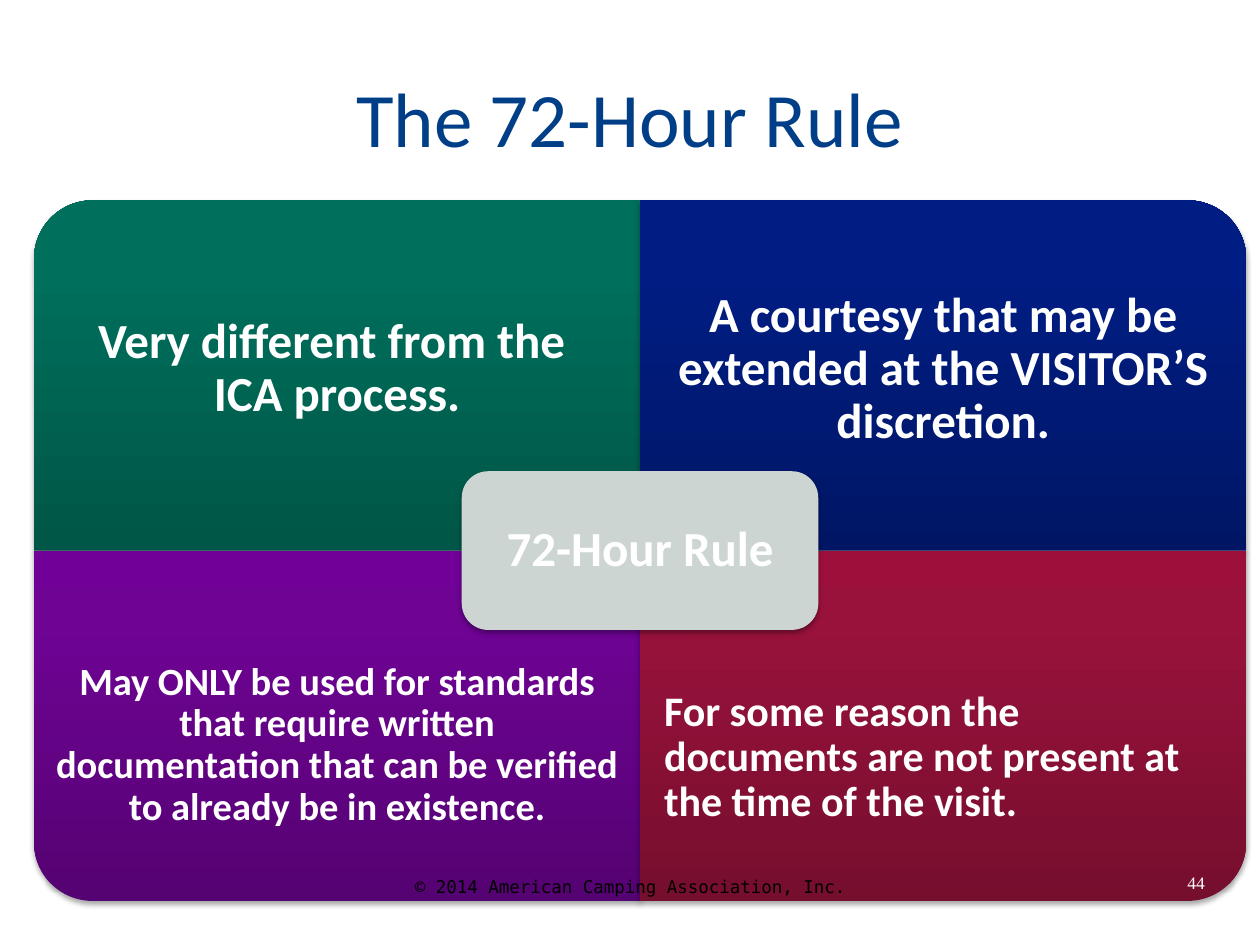
from dataclasses import dataclass

from lxml.etree import SubElement
from pptx import Presentation
from pptx.dml.color import RGBColor
from pptx.enum.shapes import MSO_SHAPE
from pptx.enum.text import MSO_ANCHOR, PP_ALIGN
from pptx.oxml import parse_xml
from pptx.oxml.ns import nsdecls, qn
from pptx.util import Inches, Pt

COLS, ROWS = 100, 75
CELL = Inches(0.1)


@dataclass(frozen=True)
class Theme:
    font: str = "Calibri"
    mono: str = "DejaVu Sans Mono"
    serif: str = "Times New Roman"
    title: str = "003F87"
    light: str = "FFFFFF"
    dark: str = "000000"
    hub: str = "CCD5D2"
    green: tuple = ("005647", "006F5C", "00705C")
    blue: tuple = ("001665", "001D83", "001D84")
    purple: tuple = ("550272", "6E0394", "700098")
    red: tuple = ("760E2E", "99123C", "9C103B")
    title_size: int = 44
    large: int = 28
    medium: int = 24
    small: int = 22
    note: int = 10


T = Theme()


def place(box):
    return [round(v * CELL) for v in box]


def add_text(s, box, text, *, size, color=T.light, font=T.font, bold=False,
             align=PP_ALIGN.CENTER, anchor=MSO_ANCHOR.MIDDLE, inset=1, spacing=None):
    tf = s.shapes.add_textbox(*place(box)).text_frame
    tf.word_wrap = True
    tf.vertical_anchor = anchor
    tf.margin_left = tf.margin_right = tf.margin_top = tf.margin_bottom = round(inset * CELL)
    p = tf.paragraphs[0]
    p.text = text
    p.alignment = align
    p.line_spacing = spacing
    for r in p.runs:
        r.font.name = font
        r.font.size = Pt(size)
        r.font.bold = bold
        r.font.color.rgb = RGBColor.from_string(color)


def add_shadow(sp):
    effects = SubElement(sp._element.spPr, qn("a:effectLst"))
    effects.append(parse_xml(
        f'<a:outerShdw {nsdecls("a")} blurRad="{Pt(3.1)}" dist="{Pt(1.8)}" dir="5400000" '
        f'rotWithShape="0"><a:srgbClr val="{T.dark}"><a:alpha val="35000"/></a:srgbClr>'
        '</a:outerShdw>'))


def fill_gradient(sp, colors):
    stops = "".join(f'<a:gs pos="{pos}"><a:srgbClr val="{c}"/></a:gs>'
                    for pos, c in zip((0, 80000, 100000), colors))
    sp._element.spPr.append(parse_xml(
        f'<a:gradFill {nsdecls("a")} rotWithShape="0"><a:gsLst>{stops}</a:gsLst>'
        '<a:lin ang="16200000" scaled="0"/></a:gradFill>'))


def add_quadrant(s, box, colors, rotation, text, shift, **style):
    x, y, w, h = box
    sw, sh = (h, w) if rotation % 180 else (w, h)
    sp = s.shapes.add_shape(MSO_SHAPE.ROUND_1_RECTANGLE,
                            *place((x + (w - sw) / 2, y + (h - sh) / 2, sw, sh)))
    sp.rotation = rotation
    fill_gradient(sp, colors)
    sp.line.fill.background()
    add_shadow(sp)
    add_text(s, (x, y + shift, w, h * 0.75), text, bold=True, spacing=0.9, **style)


def add_hub(s, box, text):
    sp = s.shapes.add_shape(MSO_SHAPE.ROUNDED_RECTANGLE, *place(box))
    sp.fill.solid()
    sp.fill.fore_color.rgb = RGBColor.from_string(T.hub)
    sp.line.fill.background()
    add_shadow(sp)
    add_text(s, box, text, size=T.large, bold=True, spacing=0.9, inset=1.2)


def add_matrix(s, box):
    x, y, w, h = box
    top = dict(shift=3, size=T.large, inset=2.2)
    low = dict(shift=2.9, anchor=MSO_ANCHOR.BOTTOM)
    quadrants = [
        (T.green, 270, "Very different from the \vICA process.", top),
        (T.blue, 0, "A courtesy that may be extended at the VISITOR’S discretion.", top),
        (T.purple, 180, "May ONLY be used for standards that require written documentation "
         "that can be verified to already be in existence.",
         dict(low, size=T.small, inset=1.7)),
        (T.red, 90, "For some reason the documents are not present at the time of the visit.",
         dict(low, size=T.medium, inset=1.9, align=PP_ALIGN.LEFT)),
    ]
    for i, (colors, rotation, text, style) in enumerate(quadrants):
        row, col = divmod(i, 2)
        part = (x + col * w / 2, y + row * h / 2, w / 2, h / 2)
        add_quadrant(s, part, colors, rotation, text, **style)
    hub_w, hub_h = 28.3, 12.6
    add_hub(s, (x + (w - hub_w) / 2, y + (h - hub_h) / 2, hub_w, hub_h), "72-Hour Rule")


def add_footer(s, box):
    x, y, w, h = box
    add_text(s, (x, y + 0.3, w, h), "© 2014 American Camping Association, Inc.",
             size=T.note, color=T.dark, font=T.mono)
    add_text(s, (x + w - 26.7, y, 23.3, h), "44",
             size=T.note, font=T.serif, align=PP_ALIGN.RIGHT)


def main():
    prs = Presentation()
    prs.slide_width, prs.slide_height = COLS * CELL, ROWS * CELL
    s = prs.slides.add_slide(prs.slide_layouts[6])
    add_text(s, (5, 3, 90, 12.5), "The 72-Hour Rule", size=T.title_size, color=T.title)
    add_matrix(s, (2.7, 15.9, 96.2, 55.6))
    add_footer(s, (0, 67.5, COLS, 5.1))
    prs.save("out.pptx")


if __name__ == "__main__":
    main()
